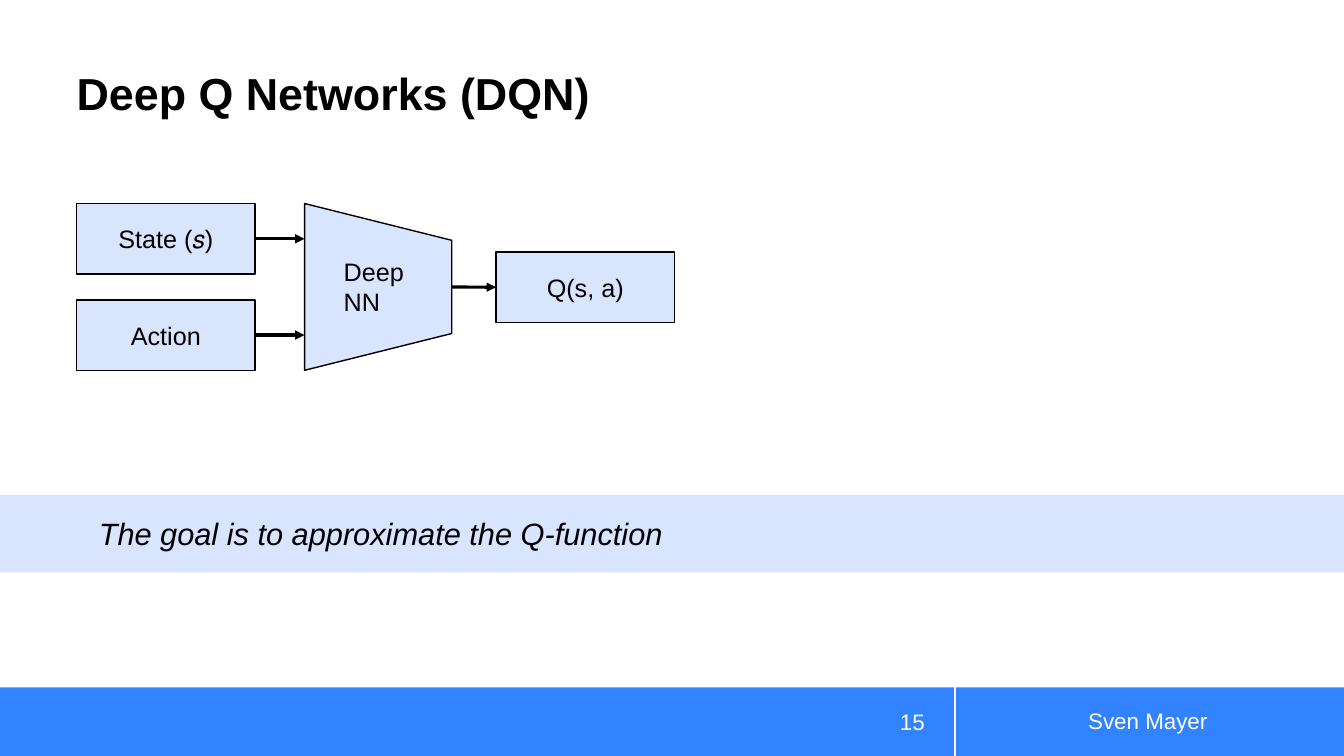
from pptx import Presentation
from pptx.dml.color import RGBColor
from pptx.enum.shapes import MSO_CONNECTOR as Link, MSO_SHAPE as Kind
from pptx.enum.text import MSO_ANCHOR as Anchor, PP_ALIGN as Align
from pptx.oxml.ns import qn
from pptx.util import Inches, Pt
from lxml import etree

WIDE, HIGH = Inches(13.33), Inches(7.5)
BLACK, WHITE, BLUE, PALE, BAND = "000000", "FFFFFF", "3183FF", "D9E4FD", "D9E5FF"

# Shares of the slide, in percent
LEFT = 5.7
BOX_W, BOX_H = 13.28, 9.33
TOP, STEP = 26.93, 12.73
NET_X, NET_W = 22.66, 10.95
OUT_X, OUT_Y = 36.91, 33.33
FOOT_Y, FOOT_H = 90.93, 9.07


def col(share):
    return round(WIDE * share / 100)


def row(share):
    return round(HIGH * share / 100)


def area(x, y, w, h):
    return col(x), row(y), col(w), row(h)


def paint(target, color):
    """Give a fill, line or font one solid colour."""
    if hasattr(target, "solid"):
        target.solid()
        target.fore_color.rgb = RGBColor.from_string(color)
    else:
        target.color.rgb = RGBColor.from_string(color)


def write(shape, text, size, color=BLACK, align=Align.LEFT,
          anchor=Anchor.MIDDLE, bold=False, italic=False):
    frame = shape.text_frame
    frame.text = text
    frame.word_wrap = True
    frame.vertical_anchor = anchor
    for para in frame.paragraphs:
        para.alignment = align
        for run in para.runs:
            font = run.font
            font.name, font.size = "Arial", Pt(size)
            font.bold, font.italic = bold, italic
            paint(font, color)
    return frame


def block(slide, kind, place, fill, edge=False):
    shape = slide.shapes.add_shape(kind, *place)
    shape.shadow.inherit = False
    paint(shape.fill, fill)
    if edge:
        paint(shape.line, BLACK)
        shape.line.width = Pt(1)
    else:
        shape.line.fill.background()
    return shape


def node(slide, text, x, y):
    box = block(slide, Kind.RECTANGLE, area(x, y, BOX_W, BOX_H), PALE, True)
    write(box, text, 18, align=Align.CENTER)


def label(slide, text, place, size, **style):
    write(slide.shapes.add_textbox(*place), text, size, **style)


def arrow(slide, x1, x2, y1, y2):
    line = slide.shapes.add_connector(
        Link.STRAIGHT, col(x1), row(y1), col(x2), row(y2))
    paint(line.line, BLACK)
    line.line.width = Pt(2.25)
    props = line._element.spPr
    tail = etree.SubElement(props.find(qn("a:ln")), qn("a:tailEnd"))
    tail.set("type", "triangle")
    etree.SubElement(props, qn("a:effectLst"))


def net(slide):
    """Draw the trapezoid on its side, wide end to the left."""
    x, y, w, h = area(NET_X, TOP, NET_W, STEP + BOX_H)
    shift = (h - w) // 2
    shape = block(slide, Kind.TRAPEZOID, (x - shift, y + shift, h, w), BAND, True)
    shape.rotation = 90
    label(slide, "Deep\nNN", area(24.83, 33.2, 6.6, 9.47), 18, anchor=Anchor.TOP)


def head(slide):
    title = slide.shapes.title
    title.left, title.top, title.width, title.height = area(LEFT, 1.73, 65.27, 14.13)
    frame = write(title, "Deep Q Networks (DQN)", 32, anchor=Anchor.BOTTOM, bold=True)
    frame.margin_left = frame.margin_right = 0
    frame.margin_top = frame.margin_bottom = 0
    frame.paragraphs[0].line_spacing = 0.9


def foot(slide):
    for x, w in ((0, 70.97), (71.12, 28.88)):
        block(slide, Kind.RECTANGLE, area(x, FOOT_Y, w, FOOT_H), BLUE)
    label(slide, "Sven Mayer", area(72.09, 92.67, 26.63, 5.33), 16,
          color=WHITE, align=Align.CENTER)
    label(slide, "15", area(63.09, 92.8, 6.45, 5.33), 16,
          color=WHITE, align=Align.RIGHT)


def goal(slide):
    band = block(slide, Kind.RECTANGLE, area(0, 65.47, 100, 10.27), BAND)
    frame = write(band, "The goal is to approximate the Q-function", 22,
                  anchor=Anchor.TOP, italic=True)
    frame.margin_left, frame.margin_right = col(7.35), col(29.56)
    frame.margin_top = frame.margin_bottom = row(2.67)


def main():
    deck = Presentation()
    deck.slide_width, deck.slide_height = WIDE, HIGH
    slide = deck.slides.add_slide(deck.slide_layouts[5])
    head(slide)
    foot(slide)
    net(slide)
    for i, text in enumerate(("State (𝑠)", "Action")):
        y = TOP + i * STEP
        node(slide, text, LEFT, y)
        mid = y + BOX_H / 2
        arrow(slide, LEFT + BOX_W, NET_X, mid, mid)
    node(slide, "Q(s, a)", OUT_X, OUT_Y)
    arrow(slide, NET_X + NET_W, OUT_X, TOP + (STEP + BOX_H) / 2, OUT_Y + BOX_H / 2)
    goal(slide)
    deck.save("out.pptx")


if __name__ == "__main__":
    main()
